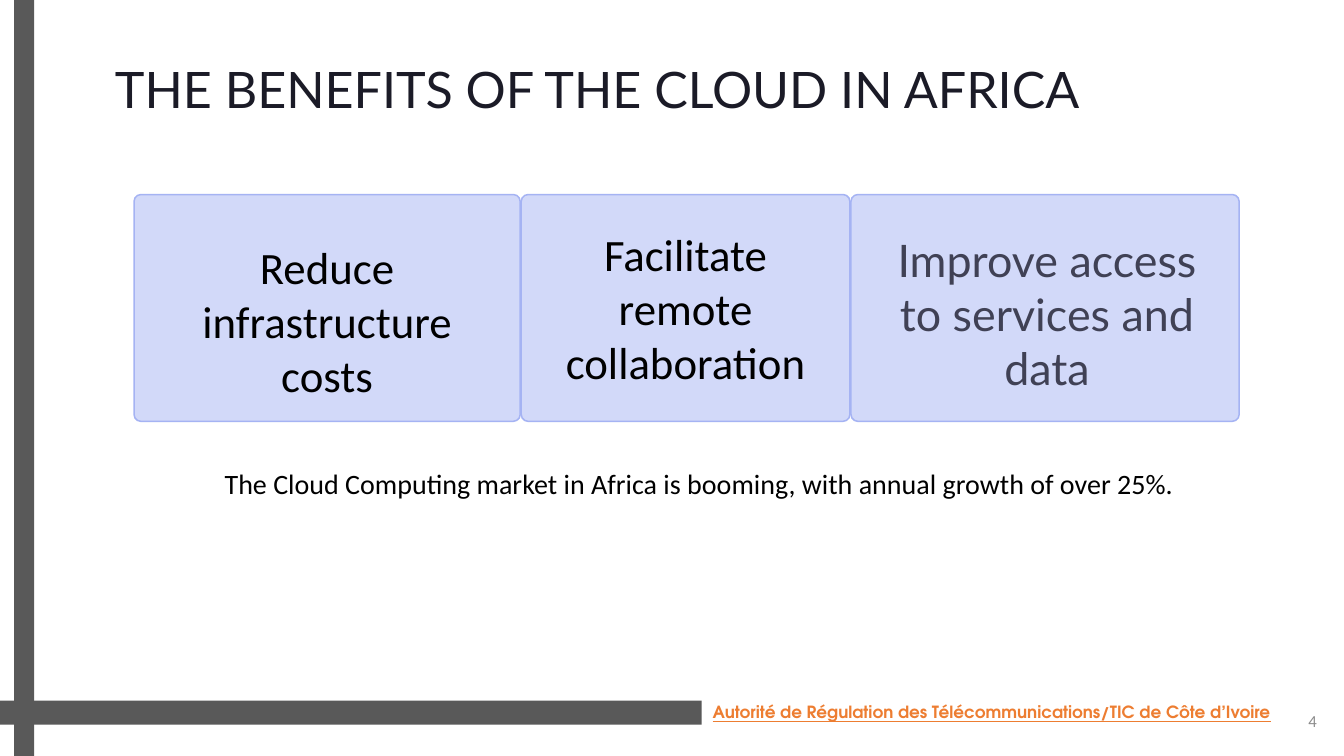
from pptx import Presentation
from pptx.dml.color import RGBColor
from pptx.enum.shapes import MSO_SHAPE as Shape
from pptx.enum.text import MSO_ANCHOR as Anchor, MSO_AUTO_SIZE as Fit, PP_ALIGN as Align
from pptx.util import Inches, Pt

TITLE = "THE BENEFITS OF THE CLOUD IN AFRICA"
GROWTH = "The Cloud Computing market in Africa is booming, with annual growth of over 25%."
FOOTER = "Autorité de Régulation des Télécommunications/TIC de Côte d’Ivoire"
PAGE = "4"

# text, card width, text inset from card left, text top, text width, font, colour
BENEFITS = [
    ("Reduce infrastructure costs", 3.83, 0.2, 2.33, 3.43, "Calibri", "000000"),
    ("Facilitate remote collaboration", 3.26, 0.23, 2.2, 2.8, "Calibri", "000000"),
    ("Improve access to services and data", 3.85, 0.23, 2.26, 3.43, "Lato", "404155"),
]
CARD_LEFT, CARD_TOP, CARD_HEIGHT, CARD_GAP = 1.33, 1.93, 2.25, 0.01
BARS = [(0, 6.95, 6.96, 0.24), (0.14, 0, 0.2, 7.5)]


def color(code):
    return RGBColor.from_string(code)


def add_box(slide, kind, box, fill, line=None):
    shape = slide.shapes.add_shape(kind, *map(Inches, box))
    shape.shadow.inherit = False
    shape.fill.solid()
    shape.fill.fore_color.rgb = color(fill)
    if line:
        shape.line.color.rgb = color(line)
        shape.line.width = Pt(1.09)
    else:
        shape.line.fill.background()
    return shape


def write(shape, text, font, size, code, align=Align.LEFT, anchor=Anchor.TOP):
    """Fill a shape with one paragraph and return that paragraph."""
    frame = shape.text_frame
    frame.text = text
    frame.word_wrap = True
    frame.auto_size = Fit.NONE
    frame.vertical_anchor = anchor
    para = frame.paragraphs[0]
    para.alignment = align
    para.font.name = font
    para.font.size = Pt(size)
    para.font.color.rgb = color(code)
    return para


def add_text(slide, box, *style):
    return write(slide.shapes.add_textbox(*map(Inches, box)), *style)


def main():
    deck = Presentation()
    deck.slide_width, deck.slide_height = Inches(13.33), Inches(7.5)
    slide = deck.slides.add_slide(deck.slide_layouts[5])

    title = slide.shapes.title
    title.left, title.top, title.width, title.height = map(Inches, (1.04, 0.5, 10.02, 1.25))
    write(title, TITLE, "Lato", 35.9, "1B1B27").line_spacing = Pt(44.9)

    for bar in BARS:
        add_box(slide, Shape.RECTANGLE, bar, "595959")

    left = CARD_LEFT
    for text, width, inset, top, wide, font, code in BENEFITS:
        card = add_box(slide, Shape.ROUNDED_RECTANGLE,
                       (left, CARD_TOP, width, CARD_HEIGHT), "D2D9F9", "A5B3F3")
        card.adjustments[0] = 0.03
        add_text(slide, (left + inset, top, wide, 1.71), text, font, 32, code, Align.CENTER)
        left += width + CARD_GAP

    add_text(slide, (2.13, 4.58, 9.67, 0.44), GROWTH, "Calibri", 20, "000000")
    footer = add_text(slide, (6.97, 6.91, 6.53, 0.3), FOOTER, "TeX Gyre Adventor", 12, "ED7D31")
    footer.font.bold = footer.font.underline = True
    add_text(slide, (12.58, 6.95, 0.58, 0.4), PAGE, "Calibri", 12, "8C8C8C",
             Align.RIGHT, Anchor.MIDDLE)
    deck.save("out.pptx")


if __name__ == "__main__":
    main()
